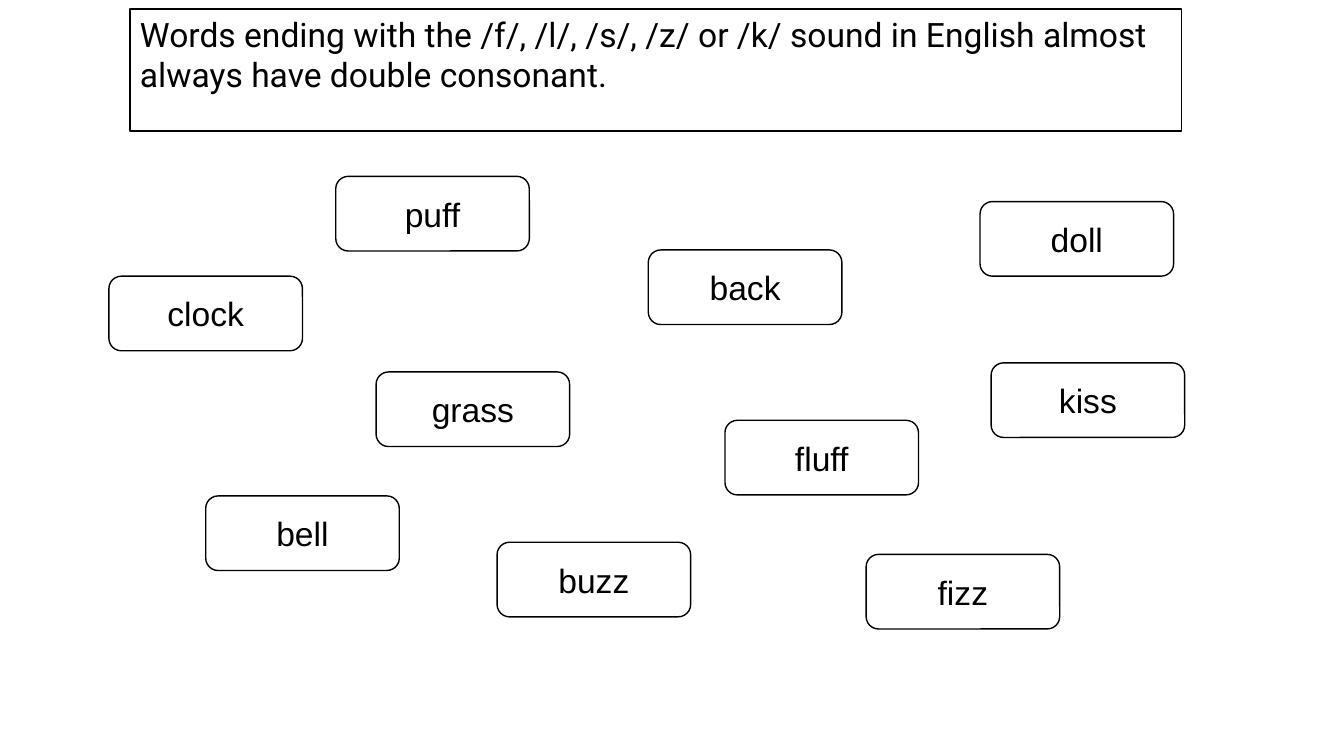
"""Build a slide with a spelling rule above scattered word cards."""
from pptx import Presentation
from pptx.dml.color import RGBColor
from pptx.enum.shapes import MSO_SHAPE
from pptx.enum.text import MSO_ANCHOR, PP_ALIGN
from pptx.util import Inches, Pt

RULE = ("Words ending with the /f/, /l/, /s/, /z/ or /k/ sound in English "
        "almost always have double consonant.")
RULE_BOX = (1.29, 0.09, 10.43, 1.21)
WORD_POSITIONS = {
    "puff": (3.33, 1.75),
    "fluff": (7.19, 4.17),
    "bell": (2.04, 4.92),
    "doll": (9.72, 2),
    "grass": (3.73, 3.69),
    "kiss": (9.83, 3.6),
    "buzz": (4.93, 5.38),
    "fizz": (8.59, 5.5),
    "clock": (1.08, 2.74),
    "back": (6.43, 2.48),
}
CARD_SIZE = (1.92, 0.74)
BLACK = RGBColor(0, 0, 0)
WHITE = RGBColor(255, 255, 255)
CARD_FORMAT = {"font": "Arial", "anchor": MSO_ANCHOR.MIDDLE, "align": PP_ALIGN.CENTER}
RULE_FORMAT = {"font": "Roboto", "anchor": MSO_ANCHOR.TOP, "align": PP_ALIGN.LEFT}


def add_panel(slide, outline, box, wording, style):
    panel = slide.shapes.add_shape(outline, *map(Inches, box))
    panel.shadow.inherit = False
    panel.fill.solid()
    panel.fill.fore_color.rgb = WHITE
    panel.line.color.rgb = BLACK
    panel.line.width = Pt(1)
    frame = panel.text_frame
    frame.word_wrap = True
    frame.vertical_anchor = style["anchor"]
    paragraph = frame.paragraphs[0]
    paragraph.alignment = style["align"]
    run = paragraph.add_run()
    run.text = wording
    for attribute, value in {"name": style["font"], "size": Pt(24)}.items():
        setattr(run.font, attribute, value)
    run.font.color.rgb = BLACK


def main():
    deck = Presentation()
    deck.slide_width, deck.slide_height = Inches(13.33), Inches(7.5)
    slide = deck.slides.add_slide(deck.slide_layouts[6])
    for word, position in WORD_POSITIONS.items():
        add_panel(slide, MSO_SHAPE.ROUNDED_RECTANGLE, position + CARD_SIZE, word, CARD_FORMAT)
    add_panel(slide, MSO_SHAPE.RECTANGLE, RULE_BOX, RULE, RULE_FORMAT)
    deck.save("out.pptx")


if __name__ == "__main__":
    main()
